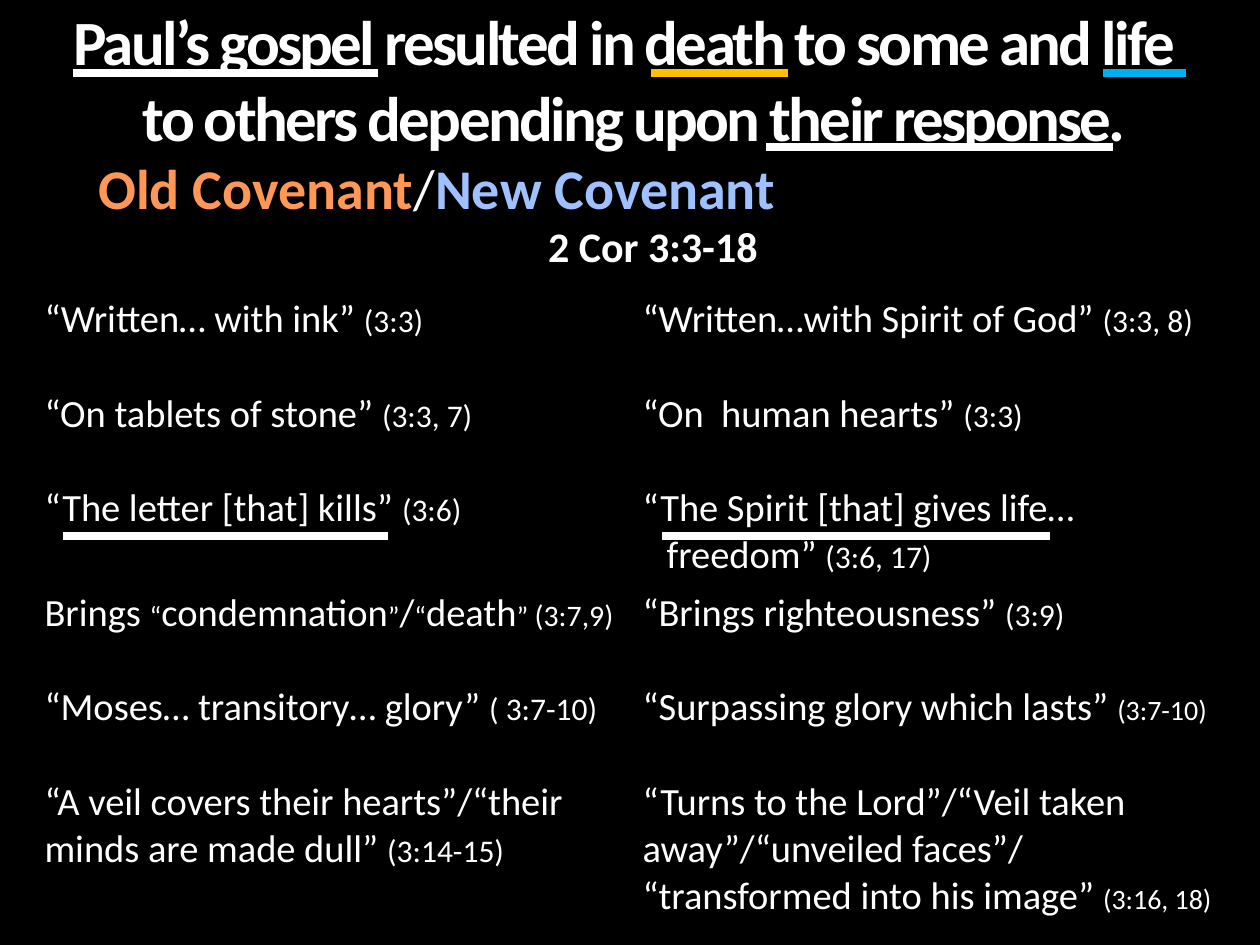
import dataclasses

import pptx
import pptx.dml.color
import pptx.enum.shapes
import pptx.enum.text
import pptx.oxml
import pptx.oxml.ns
import pptx.util
from lxml import etree

ALIGN = pptx.enum.text.PP_ALIGN
NS = pptx.oxml.ns.qn


@dataclasses.dataclass(frozen=True)
class Theme:
    font: str = "Calibri"
    black: str = "000000"
    white: str = "FFFFFF"
    old: str = "FF9856"
    new: str = "A0C1FF"
    death: str = "FFC000"
    life: str = "00B0F0"
    title: int = 36
    head: int = 32
    verse: int = 24
    body: int = 22
    ref: int = 18
    tight: int = 17
    small: int = 16
    stroke: float = 4.5


def px(count):
    return pptx.util.Emu(round(count * 914400 / 126))


def tint(code):
    return pptx.dml.color.RGBColor.from_string(code)


def write(para, text, size, color, bold=False, space=0, font=Theme.font):
    run = para.add_run()
    run.text = text
    run.font.name = font
    run.font.size = pptx.util.Pt(size)
    run.font.bold = bold
    run.font.color.rgb = tint(color)
    if space:
        run.font._element.set("spc", str(round(space * 100)))


def indent(para, left=0, right=0, first=0):
    props = para._p.get_or_add_pPr()
    for key, value in (("marL", left), ("marR", right), ("indent", first)):
        props.set(key, str(px(value)))


class Page:
    def __init__(self, slide, theme):
        self.slide = slide
        self.theme = theme
        slide.background.fill.solid()
        slide.background.fill.fore_color.rgb = tint(theme.black)

    def place(self, shape, left, top, width, height):
        shape.left, shape.top = px(left), px(top)
        shape.width, shape.height = px(width), px(height)

    def title(self, lines, *box):
        shape = self.slide.shapes.title
        self.place(shape, *box)
        frame = shape.text_frame
        frame.margin_left = frame.margin_right = 0
        frame.margin_top = frame.margin_bottom = 0
        frame.word_wrap = True
        frame.auto_size = pptx.enum.text.MSO_AUTO_SIZE.NONE
        frame.vertical_anchor = pptx.enum.text.MSO_ANCHOR.MIDDLE
        for row, (text, left, right) in enumerate(lines):
            para = frame.add_paragraph() if row else frame.paragraphs[0]
            para.alignment = ALIGN.CENTER
            para.space_before = pptx.util.Pt(0)
            indent(para, left, right)
            write(para, text, self.theme.title, self.theme.white, bold=True, space=-1.5)

    def label(self, lines, *box):
        frame = self.slide.shapes.add_textbox(*map(px, box)).text_frame
        frame.word_wrap = True
        for row, (align, left, runs) in enumerate(lines):
            para = frame.add_paragraph() if row else frame.paragraphs[0]
            para.alignment = align
            indent(para, left)
            for text, size, color, bold in runs:
                write(para, text, size, color, bold=bold)

    def border(self, cell):
        props = cell._tc.get_or_add_tcPr()
        for side in ("a:lnL", "a:lnR", "a:lnT", "a:lnB"):
            edge = etree.SubElement(props, NS(side), w="12700")
            fill = etree.SubElement(edge, NS("a:solidFill"))
            etree.SubElement(fill, NS("a:srgbClr"), val=self.theme.black)

    def table(self, rows, flat, widths, heights, left, top):
        box = map(px, (left, top, sum(widths), sum(heights)))
        grid = self.slide.shapes.add_table(len(rows), len(widths), *box).table
        grid.first_row = grid.horz_banding = False
        for col, width in zip(grid.columns, widths):
            col.width = px(width)
        for row, height in zip(grid.rows, heights):
            row.height = px(height)
        for r, row in enumerate(rows):
            for c, runs in enumerate(row):
                cell = grid.cell(r, c)
                self.border(cell)
                cell.fill.background()
                para = cell.text_frame.paragraphs[0]
                if r not in flat:
                    indent(para, left=24, first=-24)
                for text, size in runs:
                    write(para, text, size, self.theme.white)

    def line(self, start, end, y, color):
        kind = pptx.enum.shapes.MSO_CONNECTOR.STRAIGHT
        rule = self.slide.shapes.add_connector(kind, *map(px, (start, y, end, y)))
        rule.line.color.rgb = tint(color)
        rule.line.width = pptx.util.Pt(self.theme.stroke)
        etree.SubElement(rule._element.spPr, NS("a:effectLst"))


def main():
    deck = pptx.Presentation()
    deck.slide_width, deck.slide_height = px(1260), px(945)
    look = Theme()
    page = Page(deck.slides.add_slide(deck.slide_layouts[5]), look)

    page.label([
        (ALIGN.LEFT, 23, [
            ("Old Covenant", look.head, look.old, True),
            ("/", look.head, look.white, False),
            ("New Covenant", look.head, look.new, True),
        ]),
        (ALIGN.CENTER, 46, [("2 Cor 3:3-18", look.verse, look.white, True)]),
    ], 63, 147, 1134, 231)

    page.title([
        ("Paul’s gospel resulted in death to some and life", 0, 11),
        ("to others depending upon their response.", 9, 0),
    ], 63, 0, 1134, 157)

    def quote(text, verse, size=look.ref):
        return [(text + " ", look.body), (verse, size)]

    brings = [
        ("Brings ", look.body), ("“", look.small), ("condemnation", look.body),
        ("”", look.small), ("/", look.body), ("“", look.small),
        ("death", look.body), ("” ", look.small), ("(3:7,9)", look.tight),
    ]
    rows = [
        (quote("“Written… with ink”", "(3:3)"),
         quote("“Written…with Spirit of God”", "(3:3, 8)")),
        (quote("“On tablets of stone”", "(3:3, 7)"),
         quote("“On  human hearts”", "(3:3)")),
        (quote("“The letter [that] kills”", "(3:6)"),
         quote("“The Spirit [that] gives life… freedom”", "(3:6, 17)")),
        (brings, quote("“Brings righteousness”", "(3:9)")),
        (quote("“Moses… transitory… glory”", "( 3:7-10)"),
         quote("“Surpassing glory which lasts”", "(3:7-10)", look.small)),
        (quote("“A veil covers their hearts”/“their minds are made dull”", "(3:14-15)"),
         quote("“Turns to the Lord”/“Veil taken away”/“unveiled faces”/ "
               "“transformed into his image”", "(3:16, 18)", look.small)),
    ]
    page.table(rows, flat=(3, 5), widths=[598, 598], heights=[95, 94] * 3,
               left=32, top=290)

    for start, end, y, color in (
        (766, 1113, 147, look.white),
        (63, 388, 536, look.white),
        (662, 1050, 536, look.white),
        (73, 378, 73, look.white),
        (651, 788, 73, look.death),
        (1103, 1186, 73, look.life),
    ):
        page.line(start, end, y, color)

    deck.save("out.pptx")


if __name__ == "__main__":
    main()
